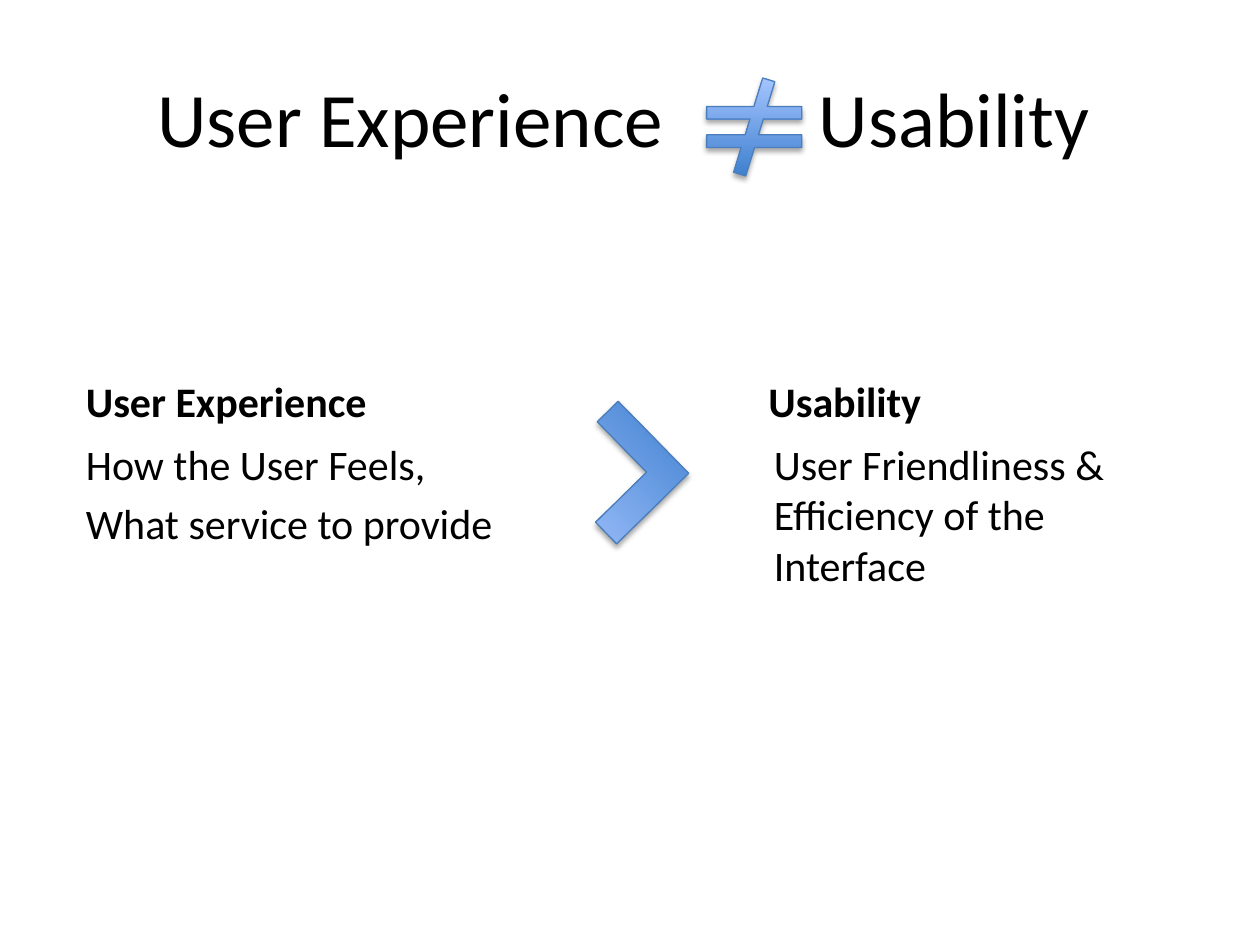
import pptx
import pptx.util
import pptx.dml.color
import pptx.enum.shapes
import pptx.enum.text
import pptx.oxml
import pptx.oxml.ns

Pt = pptx.util.Pt
ANCHOR = pptx.enum.text.MSO_ANCHOR
SHAPE = pptx.enum.shapes.MSO_SHAPE

FONT = "Calibri"
COLORS = {
    "text": "000000",
    "gradient_start": "3F80CE",
    "gradient_end": "A4C4FF",
    "outline": "4B7EBC",
    "shadow": "000000",
}
NAMESPACE = pptx.oxml.ns.nsdecls("a")


def color(name):
    return pptx.dml.color.RGBColor.from_string(COLORS[name])


def add_text(slide, box, lines, size=24, bold=False, anchor=ANCHOR.TOP,
             space_before=4.8, inset=7.2):
    """Add a text box with one paragraph per line."""
    shape = slide.shapes.add_textbox(*map(Pt, box))
    frame = shape.text_frame
    frame.word_wrap = True
    frame.vertical_anchor = anchor
    frame.margin_left = Pt(inset)
    for index, line in enumerate(lines):
        paragraph = frame.paragraphs[0] if index == 0 else frame.add_paragraph()
        paragraph.space_before = Pt(space_before)
        run = paragraph.add_run()
        run.text = line
        run.font.name = FONT
        run.font.size = Pt(size)
        run.font.bold = bold
        run.font.color.rgb = color("text")
    return shape


def add_tab_stop(paragraph, position):
    properties = paragraph._p.get_or_add_pPr()
    properties.append(pptx.oxml.parse_xml(
        f'<a:tabLst {NAMESPACE}><a:tab pos="{Pt(position)}" algn="l"/></a:tabLst>'))


def add_symbol(slide, kind, box, adjustments, rotation=0):
    """Add a blue gradient shape with a soft shadow below it."""
    shape = slide.shapes.add_shape(kind, *map(Pt, box))
    shape.rotation = rotation
    for index, value in enumerate(adjustments):
        shape.adjustments[index] = value

    shape.fill.gradient()
    shape.fill.gradient_angle = 90
    stops = shape.fill.gradient_stops
    for stop, name, position in zip(stops, ("gradient_start", "gradient_end"), (0, 1)):
        stop.color.rgb = color(name)
        stop.position = position
    shape.line.color.rgb = color("outline")
    shape.line.width = Pt(0.75)

    shape.shadow.inherit = False
    effects = shape._element.spPr.find(pptx.oxml.ns.qn("a:effectLst"))
    effects.append(pptx.oxml.parse_xml(
        f'<a:outerShdw {NAMESPACE} blurRad="{Pt(3.1)}" dist="{Pt(1.8)}" '
        f'dir="5400000" rotWithShape="0"><a:srgbClr val="{COLORS["shadow"]}">'
        '<a:alpha val="35000"/></a:srgbClr></a:outerShdw>'))


def main():
    presentation = pptx.Presentation()
    presentation.slide_width = Pt(720)
    presentation.slide_height = Pt(540)
    slide = presentation.slides.add_slide(presentation.slide_layouts[6])

    # Title, with a tab leaving room for the symbol
    title = add_text(slide, (36, 21.6, 648, 90), ["User Experience\tUsability"],
                     size=44, anchor=ANCHOR.MIDDLE, space_before=0, inset=54)
    add_tab_stop(title.text_frame.paragraphs[0], 378)

    # Left column
    add_text(slide, (42, 196.5, 252, 50.4), ["User Experience"],
             bold=True, anchor=ANCHOR.BOTTOM)
    add_text(slide, (42, 246.9, 252, 311),
             ["How the User Feels,", "What service to provide"])

    # Right column, its body text indented under the heading
    add_text(slide, (432, 196.5, 276, 50.4), ["Usability"],
             bold=True, anchor=ANCHOR.BOTTOM)
    add_text(slide, (408, 246.9, 276, 311),
             ["User Friendliness & Efficiency of the Interface"], inset=34.2)

    # Not-equal sign and greater-than sign
    add_symbol(slide, SHAPE.MATH_NOT_EQUAL, (394, 44.6, 74, 56), (0.13, 64.3, 0.16))
    add_symbol(slide, SHAPE.CORNER, (324, 241.2, 57.6, 57.6), (0.29, 0.3), rotation=225.6)

    presentation.save("out.pptx")


if __name__ == "__main__":
    main()
